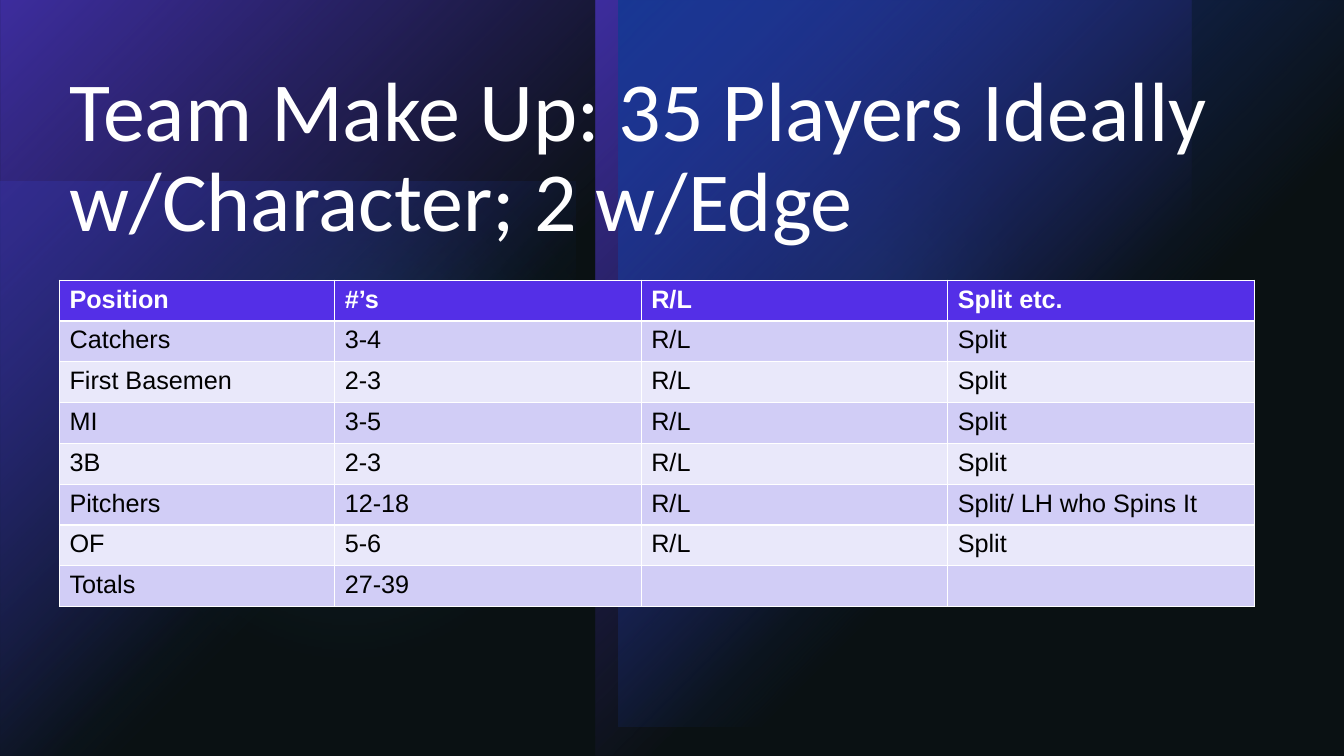
from lxml.etree import SubElement
from pptx import Presentation
from pptx.dml.color import RGBColor
from pptx.enum.shapes import MSO_SHAPE
from pptx.enum.text import MSO_ANCHOR, PP_ALIGN
from pptx.oxml import parse_xml
from pptx.oxml.ns import nsdecls, qn
from pptx.util import Inches, Pt

PURPLE, BLUE, SKY, SLATE = "542FE7", "1740D5", "29A1E7", "1B2B30"
BAND_COLORS = ("E9E8FA", "D1CDF6")

ROSTER = (
    ("Position", "#’s", "R/L", "Split etc."),
    ("Catchers", "3-4", "R/L", "Split"),
    ("First Basemen", "2-3", "R/L", "Split"),
    ("MI", "3-5", "R/L", "Split"),
    ("3B", "2-3", "R/L", "Split"),
    ("Pitchers", "12-18", "R/L", "Split/ LH who Spins It"),
    ("OF", "5-6", "R/L", "Split"),
    ("Totals", "27-39", "", ""),
)


def rgb(color):
    return RGBColor.from_string(color)


def add_panel(slide, box, color, opacity=100, kind=MSO_SHAPE.RECTANGLE):
    panel = slide.shapes.add_shape(kind, *map(Inches, box))
    panel.shadow.inherit = False
    panel.line.fill.background()
    panel.fill.solid()
    panel.fill.fore_color.rgb = rgb(color)
    color_tag = panel.element.spPr.find(qn("a:solidFill"))[0]
    SubElement(color_tag, qn("a:alpha"), val=str(opacity * 1000))
    return panel


def add_glow(slide, box, color, opacity=100, turn=0, flips="V"):
    glow = add_panel(slide, box, color)
    glow.rotation = turn
    for axis in flips:
        glow.element.spPr.xfrm.set(f"flip{axis}", "1")
    stops = "".join(
        f'<a:gs pos="{position}"><a:srgbClr val="{color}">'
        f'<a:alpha val="{alpha * 1000}"/></a:srgbClr></a:gs>'
        for position, alpha in ((0, opacity), (60000, 0))
    )
    gradient = parse_xml(
        f'<a:gradFill {nsdecls("a")} rotWithShape="1"><a:gsLst>{stops}</a:gsLst>'
        '<a:path path="circle"><a:fillToRect r="100000" b="100000"/></a:path>'
        "</a:gradFill>"
    )
    properties = glow.element.spPr
    properties.replace(properties.find(qn("a:solidFill")), gradient)


def add_haze(slide, box, opacity):
    haze = add_panel(slide, box, SKY, opacity, MSO_SHAPE.OVAL)
    effects = haze.element.spPr.find(qn("a:effectLst"))
    SubElement(effects, qn("a:softEdge"), rad=str(Inches(1.39)))


def add_backdrop(slide, width, height):
    slide.background.fill.solid()
    slide.background.fill.fore_color.rgb = rgb("000000")
    half = 5.91
    add_glow(slide, (0, 1.8, 5.71, 5.71), BLUE, 60)
    add_haze(slide, (6.29, 0.43, 4.72, 4.72), 60)
    add_haze(slide, (0, 0.56, 6.94, 6.94), 20)
    add_glow(slide, (0, 0, half, height), PURPLE, turn=180)
    add_glow(slide, (half, 0, half, height), PURPLE, turn=180, flips="HV")
    add_glow(slide, (6.13, 0, 7.21, 7.21), BLUE, turn=180)
    add_panel(slide, (0, 0, width, height), SLATE, 40)


def add_title(slide, box):
    title = slide.shapes.title
    title.element.getparent().append(title.element)
    title.left, title.top, title.width, title.height = map(Inches, box)
    frame = title.text_frame
    frame.text = "Team Make Up: 35 Players Ideally w/Character; 2 w/Edge"
    frame.word_wrap = True
    frame.vertical_anchor = MSO_ANCHOR.MIDDLE
    heading = frame.paragraphs[0]
    heading.alignment = PP_ALIGN.LEFT
    heading.line_spacing = 0.9
    font = heading.runs[0].font
    font.name, font.size = "Calibri", Pt(60)
    font.color.rgb = rgb("FFFFFF")


def add_roster(slide, box):
    roster = slide.shapes.add_table(
        len(ROSTER), len(ROSTER[0]), *map(Inches, box)
    ).table
    position_width = 2.73
    other_width = (box[2] - position_width) / (len(ROSTER[0]) - 1)
    for index, column in enumerate(roster.columns):
        column.width = Inches(other_width if index else position_width)
    for row, entries in enumerate(ROSTER):
        is_header = row == 0
        for column, entry in enumerate(entries):
            cell = roster.cell(row, column)
            cell.text = entry
            cell.fill.solid()
            cell.fill.fore_color.rgb = rgb(PURPLE if is_header else BAND_COLORS[row % 2])
            font = cell.text_frame.paragraphs[0].font
            for run in cell.text_frame.paragraphs[0].runs:
                font = run.font
            font.name, font.size, font.bold = "Arial", Pt(18), is_header
            font.color.rgb = rgb("FFFFFF" if is_header else "000000")


def main():
    width, height = 13.33, 7.5
    deck = Presentation()
    deck.slide_width, deck.slide_height = Inches(width), Inches(height)
    slide = deck.slides.add_slide(deck.slide_layouts[5])
    add_backdrop(slide, width, height)
    add_title(slide, (0.59, 0.59, 12.14, 1.98))
    add_roster(slide, (0.59, 2.78, 11.85, 3.24))
    deck.save("out.pptx")


if __name__ == "__main__":
    main()
